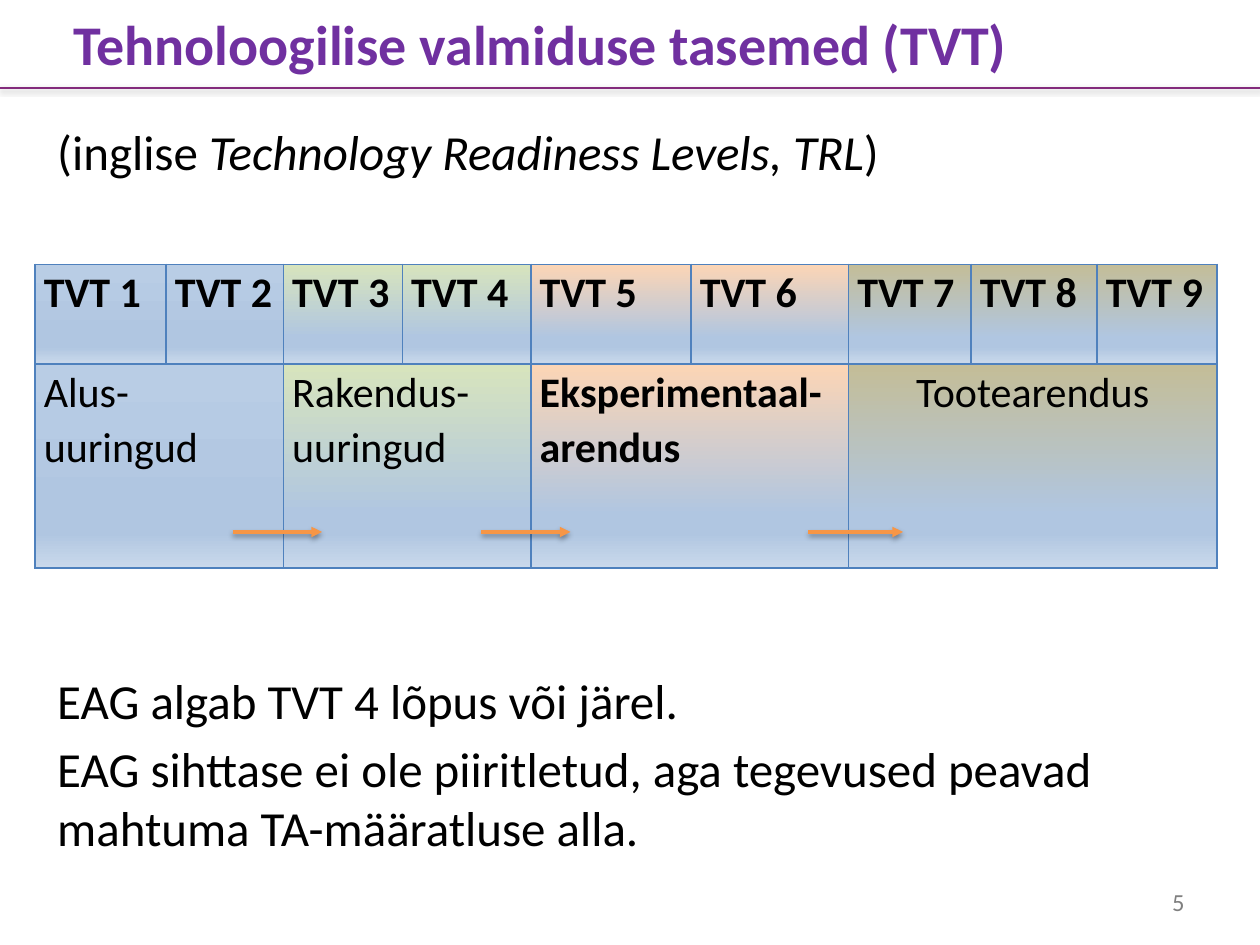
from dataclasses import dataclass

from lxml.etree import SubElement
from pptx import Presentation
from pptx.dml.color import RGBColor
from pptx.enum.shapes import MSO_CONNECTOR
from pptx.enum.text import MSO_ANCHOR, MSO_AUTO_SIZE, PP_ALIGN
from pptx.oxml.ns import qn
from pptx.util import Pt

PURPLE = RGBColor(0x70, 0x30, 0xA0)
PLUM = RGBColor(0x83, 0x2B, 0x7C)
BLACK = RGBColor(0, 0, 0)
GREY = RGBColor(0x80, 0x80, 0x80)
ORANGE = RGBColor(0xF7, 0x96, 0x46)
BORDER_BLUE = RGBColor(0x4F, 0x81, 0xBD)
LIGHT_BLUE = RGBColor(0xB9, 0xCD, 0xE5)
GREEN = RGBColor(0xD7, 0xE4, 0xBD)
PEACH = RGBColor(0xFC, 0xD5, 0xB5)
KHAKI = RGBColor(0xC4, 0xBD, 0x97)
MID_BLUE = RGBColor(0xB0, 0xC6, 0xE1)
PALE_BLUE = RGBColor(0xCA, 0xD9, 0xEB)


@dataclass
class Phase:
    label: str
    levels: int
    tint: RGBColor
    bold: bool = False
    align: PP_ALIGN = PP_ALIGN.LEFT


@dataclass
class Line:
    x1: float
    x2: float
    y: float
    color: RGBColor
    width: float
    shadow_alpha: int
    shadow_distance: float
    arrow: bool = True


PHASES = [
    Phase("Alus- uuringud", 2, LIGHT_BLUE),
    Phase("Rakendus- uuringud", 2, GREEN),
    Phase("Eksperimentaal- arendus", 2, PEACH, bold=True),
    Phase("Tootearendus", 3, KHAKI, align=PP_ALIGN.CENTER),
]
LEVEL_WIDTHS = [75, 67, 68, 73.5, 91.5, 90, 70, 72, 68.5]
ROW_HEIGHTS = [57, 116.5]
ARROW_SPANS = [(133, 184), (275, 326), (462, 516)]


def write(paragraph, *texts, size, color=BLACK, bold=False, align=PP_ALIGN.LEFT,
          space_before=0, line_spacing=None, italic_runs=()):
    """Fill a paragraph with one run for each text."""
    paragraph.alignment = align
    paragraph.space_before = Pt(space_before)
    if line_spacing:
        paragraph.line_spacing = line_spacing
    for index, text in enumerate(texts):
        run = paragraph.add_run()
        run.text = text
        font = run.font
        font.name, font.size, font.bold = "Calibri", Pt(size), bold
        font.italic = index in italic_runs
        font.color.rgb = color


def place(shape, left: float, top: float, width: float, height: float, anchor):
    shape.left, shape.top = Pt(left), Pt(top)
    shape.width, shape.height = Pt(width), Pt(height)
    frame = shape.text_frame
    frame.word_wrap = True
    frame.auto_size = MSO_AUTO_SIZE.NONE
    frame.vertical_anchor = anchor
    return frame


def add_color(parent, color: RGBColor):
    return SubElement(parent, qn("a:srgbClr"), val=str(color))


def draw_line(slide, line: Line) -> None:
    connector = slide.shapes.add_connector(
        MSO_CONNECTOR.STRAIGHT, Pt(line.x1), Pt(line.y), Pt(line.x2), Pt(line.y))
    connector.line.color.rgb = line.color
    connector.line.width = Pt(line.width)
    properties = connector._element.spPr
    if line.arrow:
        SubElement(properties.find(qn("a:ln")), qn("a:tailEnd"), type="triangle")
    effects = SubElement(properties, qn("a:effectLst"))
    shadow = SubElement(effects, qn("a:outerShdw"), blurRad=str(Pt(3.1)),
                        dist=str(Pt(line.shadow_distance)), dir="5400000", rotWithShape="0")
    SubElement(add_color(shadow, BLACK), qn("a:alpha"), val=str(line.shadow_alpha * 1000))


def style_cell(cell, tint: RGBColor) -> None:
    """Give a cell its insets, thin blue borders and downward gradient."""
    cell.margin_left = cell.margin_right = Pt(5)
    cell.margin_top = cell.margin_bottom = 0
    properties = cell._tc.get_or_add_tcPr()
    for side in ("a:lnL", "a:lnR", "a:lnT", "a:lnB"):
        border = SubElement(properties, qn(side), w=str(Pt(1)))
        add_color(SubElement(border, qn("a:solidFill")), BORDER_BLUE)
    gradient = SubElement(properties, qn("a:gradFill"), rotWithShape="1")
    stops = SubElement(gradient, qn("a:gsLst"))
    for percent, color in ((0, tint), (74, MID_BLUE), (83, MID_BLUE), (100, PALE_BLUE)):
        add_color(SubElement(stops, qn("a:gs"), pos=str(percent * 1000)), color)
    SubElement(gradient, qn("a:lin"), ang="5400000", scaled="0")


def draw_levels(slide, phases: list[Phase]) -> None:
    table = slide.shapes.add_table(
        2, len(LEVEL_WIDTHS), Pt(20), Pt(151), Pt(sum(LEVEL_WIDTHS)), Pt(sum(ROW_HEIGHTS))).table
    table.first_row = table.horz_banding = False
    for column, width in zip(table.columns, LEVEL_WIDTHS):
        column.width = Pt(width)
    for row, height in zip(table.rows, ROW_HEIGHTS):
        row.height = Pt(height)

    first = 0
    for phase in phases:
        after = first + phase.levels
        for level in range(first, after):
            for row in range(2):
                style_cell(table.cell(row, level), phase.tint)
            write(table.cell(0, level).text_frame.paragraphs[0], f"TVT {level + 1}",
                  size=24, bold=True, line_spacing=1.07)
        phase_cell = table.cell(1, first)
        phase_cell.merge(table.cell(1, after - 1))
        write(phase_cell.text_frame.paragraphs[0], phase.label, size=24,
              bold=phase.bold, align=phase.align, line_spacing=1.07)
        first = after


def add_body_paragraph(paragraph, *texts, **formatting) -> None:
    properties = paragraph._p.get_or_add_pPr()
    properties.set("marL", "0")
    properties.set("indent", "0")
    SubElement(properties, qn("a:buNone"))
    write(paragraph, *texts, size=28, **formatting)


def main() -> None:
    presentation = Presentation()
    presentation.slide_width, presentation.slide_height = Pt(720), Pt(540)
    slide = presentation.slides.add_slide(presentation.slide_layouts[1])

    # Heading with its rule
    draw_line(slide, Line(0, 720, 50.4, PLUM, 1, 25, 1, arrow=False))
    heading = place(slide.shapes.title, 8.5, 0, 601, 49, MSO_ANCHOR.MIDDLE)
    write(heading.paragraphs[0], "Tehnoloogilise valmiduse tasemed (TVT)",
          size=32, color=PURPLE, bold=True, align=PP_ALIGN.CENTER)

    # Explanations above and below the table
    notes = place(slide.placeholders[1], 25.5, 66, 659, 488, MSO_ANCHOR.TOP)
    add_body_paragraph(notes.paragraphs[0], "(inglise ",
                       "Technology Readiness Levels, TRL", ")", italic_runs=(1,))
    add_body_paragraph(notes.add_paragraph(), "EAG algab TVT 4 lõpus või järel.",
                       space_before=280)
    add_body_paragraph(notes.add_paragraph(),
                       "EAG sihttase ei ole piiritletud, aga tegevused peavad "
                       "mahtuma TA-määratluse alla.", space_before=5)

    # Slide number
    number = place(slide.shapes.add_textbox(0, 0, 0, 0), 516, 500.5, 168, 29, MSO_ANCHOR.MIDDLE)
    write(number.paragraphs[0], "5", size=14, color=GREY, align=PP_ALIGN.RIGHT)

    # Readiness levels and the steps between phases
    draw_levels(slide, PHASES)
    for start, end in ARROW_SPANS:
        draw_line(slide, Line(start, end, 304, ORANGE, 2, 38, 1.6))

    presentation.save("out.pptx")


if __name__ == "__main__":
    main()
